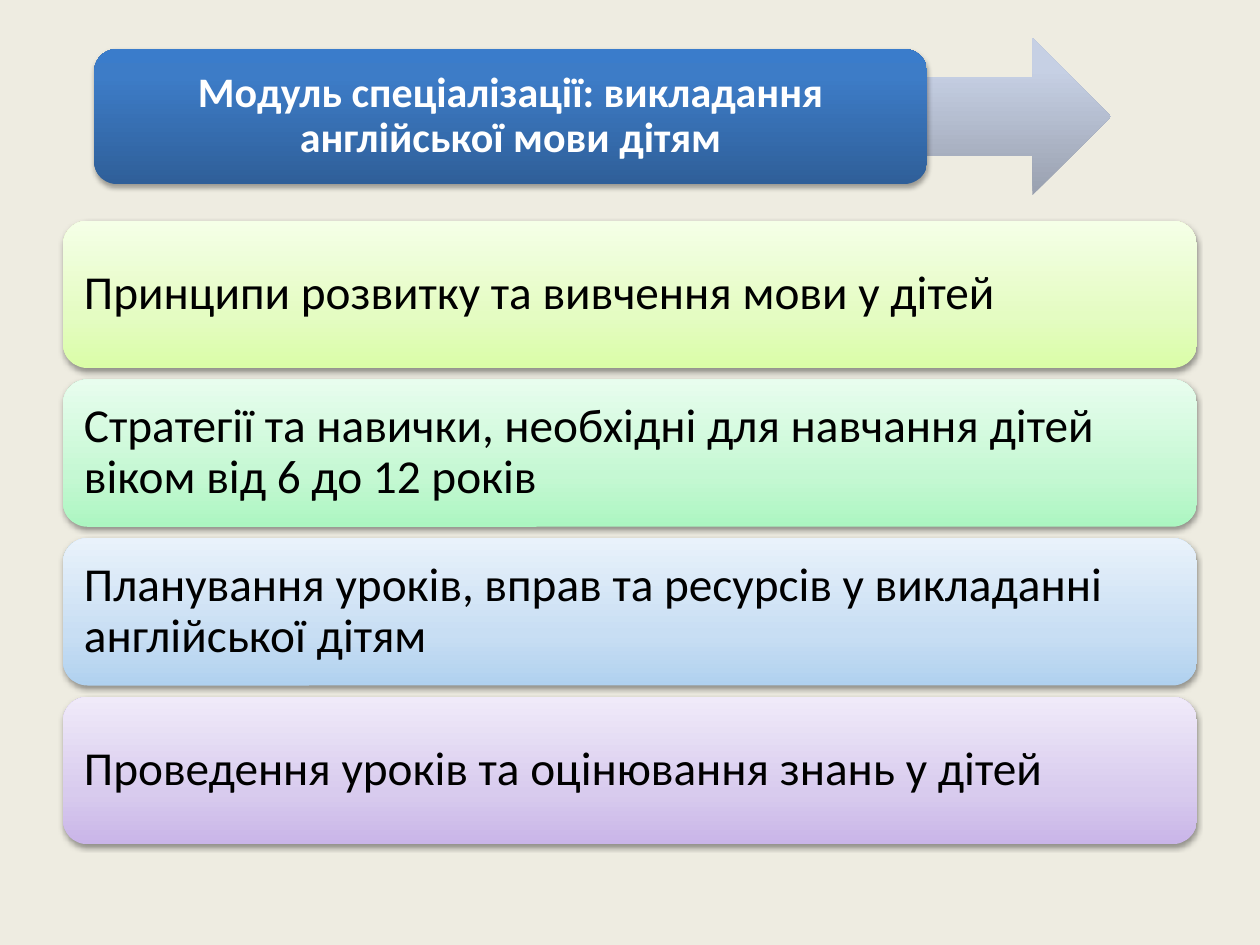
from copy import deepcopy
from dataclasses import dataclass

from lxml import etree
from pptx import Presentation
from pptx.dml.color import RGBColor
from pptx.enum.shapes import MSO_SHAPE
from pptx.enum.text import MSO_ANCHOR, PP_ALIGN
from pptx.oxml.ns import qn
from pptx.util import Cm, Pt

ARROW = MSO_SHAPE.RIGHT_ARROW
ROUNDED = MSO_SHAPE.ROUNDED_RECTANGLE
MIDDLE = MSO_ANCHOR.MIDDLE
LEFT, CENTER = PP_ALIGN.LEFT, PP_ALIGN.CENTER


@dataclass(frozen=True)
class Theme:
    font: str = "Calibri"
    background: str = "EEECE1"
    title_color: str = "FFFFFF"
    topic_color: str = "000000"
    title_size: int = 24
    topic_size: int = 27
    arrow_gradient: tuple = ((0, "99A0AF"), (0.8, "C6D0E4"), (1, "C7D1E5"))
    title_gradient: tuple = ((0, "2F5F99"), (0.8, "3D7CC7"), (1, "3A7CCB"))
    topic_gradients: tuple = (
        ((0, "DAFDA7"), (0.35, "E4FCC2"), (1, "F5FFE7")),
        ((0, "ACF6C1"), (0.35, "C5F8D3"), (1, "E8FDEE")),
        ((0, "B0D1EF"), (0.35, "C8DEF3"), (1, "E9F2FB")),
        ((0, "C9B5E8"), (0.35, "D8CBEE"), (1, "F0EAF9")),
    )


class ModuleSlide:
    def __init__(self, slide, theme):
        self.slide = slide
        self.theme = theme
        fill = slide.background.fill
        fill.solid()
        fill.fore_color.rgb = RGBColor.from_string(theme.background)

    def block(self, preset, box, gradient):
        shape = self.slide.shapes.add_shape(preset, *(Cm(v) for v in box))
        shape.shadow.inherit = False
        shape.line.fill.background()
        shape.fill.gradient()
        shape.fill.gradient_angle = 90
        stop_list = shape._element.spPr.find(".//" + qn("a:gsLst"))
        stop_list.append(deepcopy(stop_list[0]))
        for stop, (position, color) in zip(shape.fill.gradient_stops, gradient):
            stop.position = position
            stop.color.rgb = RGBColor.from_string(color)
        return shape

    def drop_shadow(self, shape, opacity, distance):
        effects = shape._element.spPr.find(qn("a:effectLst"))
        shadow = etree.SubElement(
            effects, qn("a:outerShdw"), blurRad=str(Pt(3.1)),
            dist=str(Pt(distance)), dir="5400000", rotWithShape="0")
        color = etree.SubElement(shadow, qn("a:srgbClr"), val="000000")
        etree.SubElement(color, qn("a:alpha"), val=str(opacity * 1000))

    def label(self, shape, text, size, color, align, inset, bold=False):
        frame = shape.text_frame
        frame.text = text
        frame.word_wrap = True
        frame.vertical_anchor = MIDDLE
        frame.margin_left = frame.margin_right = Cm(inset)
        frame.margin_top = frame.margin_bottom = Cm(inset)
        paragraph = frame.paragraphs[0]
        paragraph.alignment = align
        paragraph.line_spacing = 0.9
        paragraph.space_after = Pt(round(size * 0.35, 1))
        font = paragraph.runs[0].font
        font.name = self.theme.font
        font.size = Pt(size)
        font.bold = bold
        font.color.rgb = RGBColor.from_string(color)

    def arrow(self, box):
        self.block(ARROW, box, self.theme.arrow_gradient)

    def title(self, text, box):
        theme = self.theme
        shape = self.block(ROUNDED, box, theme.title_gradient)
        self.drop_shadow(shape, 35, 1.8)
        self.label(shape, text, theme.title_size, theme.title_color, CENTER, 0.25, bold=True)

    def topic(self, text, box, gradient):
        theme = self.theme
        shape = self.block(ROUNDED, box, gradient)
        self.drop_shadow(shape, 38, 1.6)
        self.label(shape, text, theme.topic_size, theme.topic_color, LEFT, 0.28)


TITLE = "Модуль спеціалізації: викладання англійської мови дітям"
TOPICS = (
    "Принципи розвитку та вивчення мови у дітей",
    "Стратегії та навички, необхідні для навчання дітей віком від 6 до 12 років",
    "Планування уроків, вправ та ресурсів у викладанні англійської дітям",
    "Проведення уроків та оцінювання знань у дітей",
)
TOPIC_TOP, TOPIC_PITCH = 4.45, 3.2


def main():
    presentation = Presentation()
    presentation.slide_width = Cm(25.4)
    presentation.slide_height = Cm(19.05)
    theme = Theme()
    module = ModuleSlide(
        presentation.slides.add_slide(presentation.slide_layouts[6]), theme)
    module.arrow((2.97, 0.76, 19.43, 3.18))
    module.title(TITLE, (1.9, 0.99, 16.79, 2.72))
    for row, (text, gradient) in enumerate(zip(TOPICS, theme.topic_gradients)):
        top = TOPIC_TOP + row * TOPIC_PITCH
        module.topic(text, (1.27, top, 22.86, 2.97), gradient)
    presentation.save("out.pptx")


if __name__ == "__main__":
    main()
